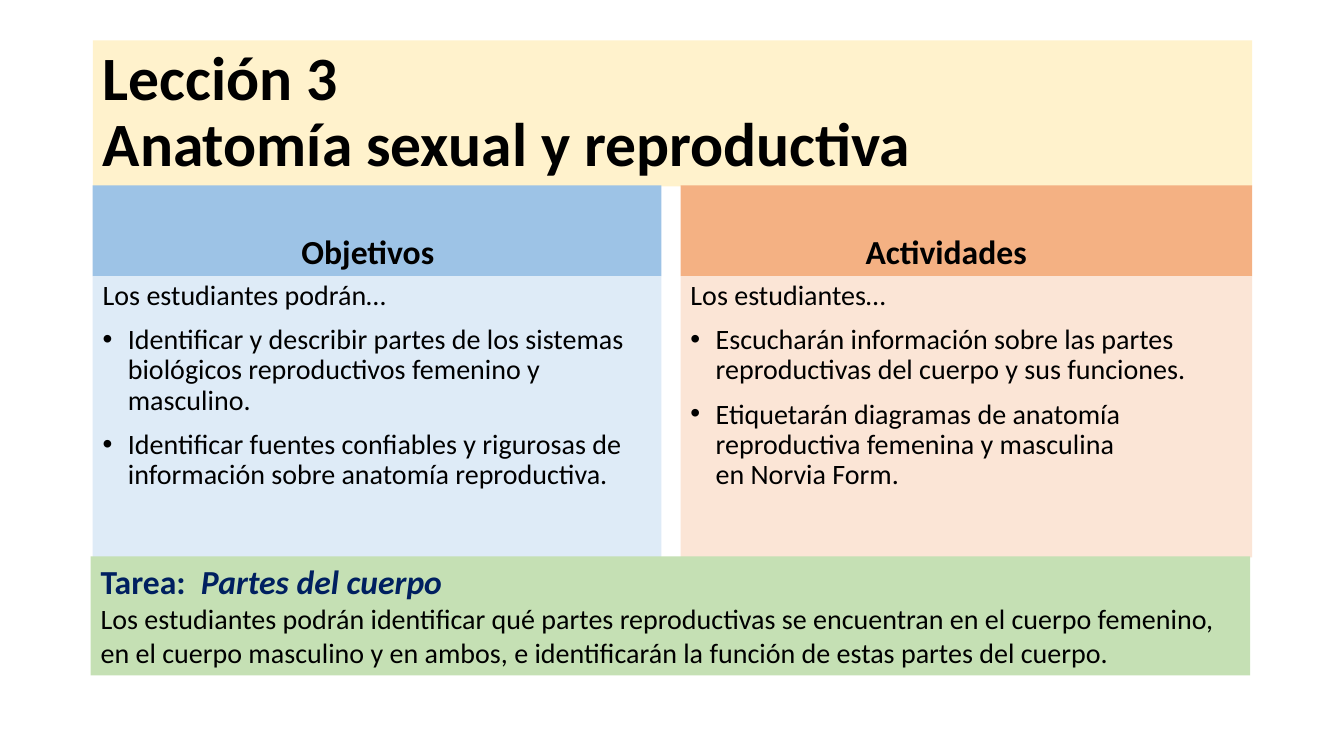
from dataclasses import dataclass

from lxml import etree
from pptx import Presentation
from pptx.dml.color import RGBColor
from pptx.enum.text import MSO_ANCHOR, MSO_AUTO_SIZE, PP_ALIGN
from pptx.oxml.ns import qn
from pptx.util import Pt

PX = 9144  # 100 px to the inch
FONT = "Calibri"
TITLE_ONLY = 5
TOP, MIDDLE, BOTTOM = MSO_ANCHOR.TOP, MSO_ANCHOR.MIDDLE, MSO_ANCHOR.BOTTOM
LEFT, CENTER = PP_ALIGN.LEFT, PP_ALIGN.CENTER
NO_FIT = MSO_AUTO_SIZE.NONE

BLACK = RGBColor(0x00, 0x00, 0x00)
NAVY = RGBColor(0x00, 0x20, 0x60)
CREAM = RGBColor(0xFF, 0xF2, 0xCC)
BLUE = RGBColor(0x9D, 0xC3, 0xE6)
PALE_BLUE = RGBColor(0xDE, 0xEB, 0xF7)
ORANGE = RGBColor(0xF4, 0xB1, 0x83)
PALE_ORANGE = RGBColor(0xFB, 0xE5, 0xD6)
GREEN = RGBColor(0xC5, 0xE0, 0xB4)

HEAD_TOP, HEAD_H = 184, 90
BODY_TOP, BODY_H = HEAD_TOP + HEAD_H, 279


@dataclass
class Column:
    left: int
    width: int
    heading: str
    head_fill: RGBColor
    body_fill: RGBColor
    intro: str
    bullets: list[str]


COLUMNS = [
    Column(92, 564, "Objetivos\t", BLUE, PALE_BLUE, "Los estudiantes podrán…", [
        "Identificar y describir partes de los sistemas biológicos "
        "reproductivos femenino y masculino.",
        "Identificar fuentes confiables y rigurosas de información sobre "
        "anatomía reproductiva.",
    ]),
    Column(675, 567, "Actividades\t", ORANGE, PALE_ORANGE, "Los estudiantes…", [
        "Escucharán información sobre las partes reproductivas del cuerpo "
        "y sus funciones.",
        "Etiquetarán diagramas de anatomía reproductiva femenina y "
        "masculina \ven Norvia Form.",
    ]),
]


def format_panel(sp, box: tuple[int, int, int, int], fill: RGBColor, anchor):
    """Place and fill a text panel; return its text frame."""
    sp.left, sp.top, sp.width, sp.height = (v * PX for v in box)
    sp.fill.solid()
    sp.fill.fore_color.rgb = fill
    tf = sp.text_frame
    tf.word_wrap = True
    tf.auto_size = NO_FIT
    tf.vertical_anchor = anchor
    return tf


def add_panel(slide, box: tuple[int, int, int, int], fill: RGBColor, anchor=TOP):
    return format_panel(slide.shapes.add_textbox(0, 0, 0, 0), box, fill, anchor)


def style(p, size: int, color: RGBColor = BLACK, bold: bool = False,
          align=LEFT, spacing: float = 1.0) -> None:
    p.font.name = FONT
    p.font.size = Pt(size)
    p.font.color.rgb = color
    p.font.bold = bold
    p.alignment = align
    p.line_spacing = spacing


def add_bullet(p) -> None:
    pPr = p._p.get_or_add_pPr()
    pPr.set("marL", str(25 * PX))
    pPr.set("indent", str(-25 * PX))
    font = etree.Element(qn("a:buFont"), typeface="Arial")
    char = etree.Element(qn("a:buChar"), char="•")
    def_rpr = pPr.find(qn("a:defRPr"))
    def_rpr.addprevious(font)
    def_rpr.addprevious(char)


def draw_column(slide, col: Column) -> None:
    tf = add_panel(slide, (col.left, HEAD_TOP, col.width, HEAD_H),
                   col.head_fill, BOTTOM)
    p = tf.paragraphs[0]
    p.text = col.heading
    style(p, 24, bold=True, align=CENTER)

    tf = add_panel(slide, (col.left, BODY_TOP, col.width, BODY_H), col.body_fill)
    p = tf.paragraphs[0]
    p.text = col.intro
    style(p, 20, spacing=0.9)
    for text in col.bullets:
        p = tf.add_paragraph()
        p.text = text
        style(p, 20, spacing=0.9)
        p.space_before = Pt(10)
        add_bullet(p)


def draw_homework(slide) -> None:
    tf = add_panel(slide, (90, 552, 1150, 118), GREEN)
    p = tf.paragraphs[0]
    p.add_run().text = "Tarea:  "
    r = p.add_run()
    r.text = "Partes del cuerpo"
    r.font.italic = True
    style(p, 24, NAVY, bold=True)
    p = tf.add_paragraph()
    p.text = ("Los estudiantes podrán identificar qué partes reproductivas se "
              "encuentran en el cuerpo femenino, en el cuerpo masculino y en "
              "ambos, e identificarán la función de estas partes del cuerpo.")
    style(p, 20)


def main() -> None:
    prs = Presentation()
    prs.slide_width, prs.slide_height = 1333 * PX, 750 * PX
    slide = prs.slides.add_slide(prs.slide_layouts[TITLE_ONLY])

    # Title
    tf = format_panel(slide.shapes.title, (92, 40, 1150, 145), CREAM, MIDDLE)
    p = tf.paragraphs[0]
    p.text = "Lección 3\vAnatomía sexual y reproductiva"
    style(p, 44, bold=True, spacing=0.9)

    # Objectives and activities
    for col in COLUMNS:
        draw_column(slide, col)

    # Homework
    draw_homework(slide)
    prs.save("out.pptx")


if __name__ == "__main__":
    main()
